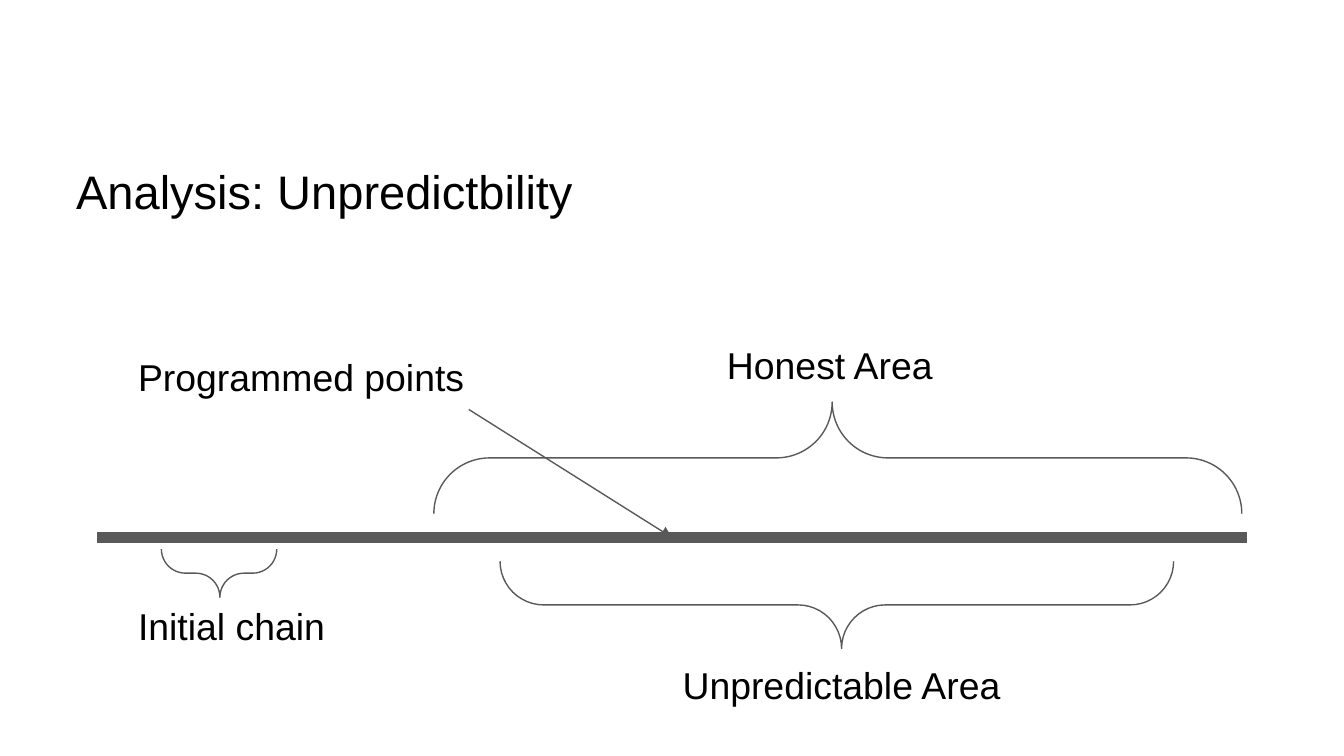
from dataclasses import dataclass

from pptx import Presentation
from pptx.dml.color import RGBColor
from pptx.enum.shapes import MSO_CONNECTOR as CONN, MSO_SHAPE as SHAPE
from pptx.enum.text import MSO_ANCHOR as ANCHOR
from pptx.oxml.ns import qn
from pptx.slide import Slide
from pptx.util import Cm, Pt
from lxml.etree import SubElement

BLACK = RGBColor(0x00, 0x00, 0x00)
GRAY = RGBColor(0x59, 0x59, 0x59)
FONT = "Arial"
INSET = Cm(0.25)
CHAIN_Y = 10.16


@dataclass(frozen=True)
class Label:
    text: str
    left: float
    top: float
    width: float


@dataclass(frozen=True)
class Brace:
    left: float
    top: float
    width: float
    height: float
    rotation: int


LABELS = [
    Label("Initial chain", 2.36, 11.15, 4.04),
    Label("Programmed points", 2.36, 6.45, 8.0),
    Label("Honest Area", 13.49, 6.22, 6.45),
    Label("Unpredictable Area", 12.65, 12.27, 8.69),
]

BRACES = [
    Brace(3.05, 10.38, 2.18, 0.91, 90),
    Brace(8.2, 7.6, 15.27, 2.11, 270),
    Brace(9.45, 10.61, 12.73, 1.65, 90),
]


def add_text(s: Slide, text: str, left: float, top: float, width: float, *,
             height: float = 1.37, size: float = 20,
             anchor: ANCHOR = ANCHOR.TOP) -> None:
    tf = s.shapes.add_textbox(Cm(left), Cm(top), Cm(width), Cm(height)).text_frame
    tf.word_wrap = True
    tf.vertical_anchor = anchor
    tf.margin_left = tf.margin_right = tf.margin_top = tf.margin_bottom = INSET
    r = tf.paragraphs[0].add_run()
    r.text = text
    r.font.name = FONT
    r.font.size = Pt(size)
    r.font.color.rgb = BLACK


def add_line(s: Slide, x1: float, y1: float, x2: float, y2: float, *,
             weight: float, arrow: bool = False) -> None:
    sp = s.shapes.add_connector(CONN.STRAIGHT, Cm(x1), Cm(y1), Cm(x2), Cm(y2))
    sp.line.color.rgb = GRAY
    sp.line.width = Pt(weight)
    if arrow:
        SubElement(sp.line._get_or_add_ln(), qn("a:tailEnd"), type="triangle")
    SubElement(sp._element.spPr, qn("a:effectLst"))


def add_brace(s: Slide, brace: Brace) -> None:
    shift = (brace.width - brace.height) / 2
    sp = s.shapes.add_shape(SHAPE.RIGHT_BRACE, Cm(brace.left + shift),
                            Cm(brace.top - shift), Cm(brace.height), Cm(brace.width))
    sp.rotation = brace.rotation
    sp.adjustments[0] = 0.5
    sp.adjustments[1] = 0.493
    sp.shadow.inherit = False
    sp.fill.background()
    sp.line.color.rgb = GRAY
    sp.line.width = Pt(0.75)


def main() -> None:
    prs = Presentation()
    prs.slide_width, prs.slide_height = Cm(25.4), Cm(14.29)
    s = prs.slides.add_slide(prs.slide_layouts[6])

    add_line(s, 1.84, CHAIN_Y, 23.56, CHAIN_Y, weight=6)
    for brace in BRACES:
        add_brace(s, brace)
    add_line(s, 8.86, 7.74, 12.7, CHAIN_Y, weight=0.75, arrow=True)
    for label in LABELS:
        add_text(s, label.text, label.left, label.top, label.width)
    add_text(s, "Analysis: Unpredictbility", 1.19, 2.82, 23.67,
             height=1.6, size=25.2)

    prs.save("out.pptx")


if __name__ == "__main__":
    main()
